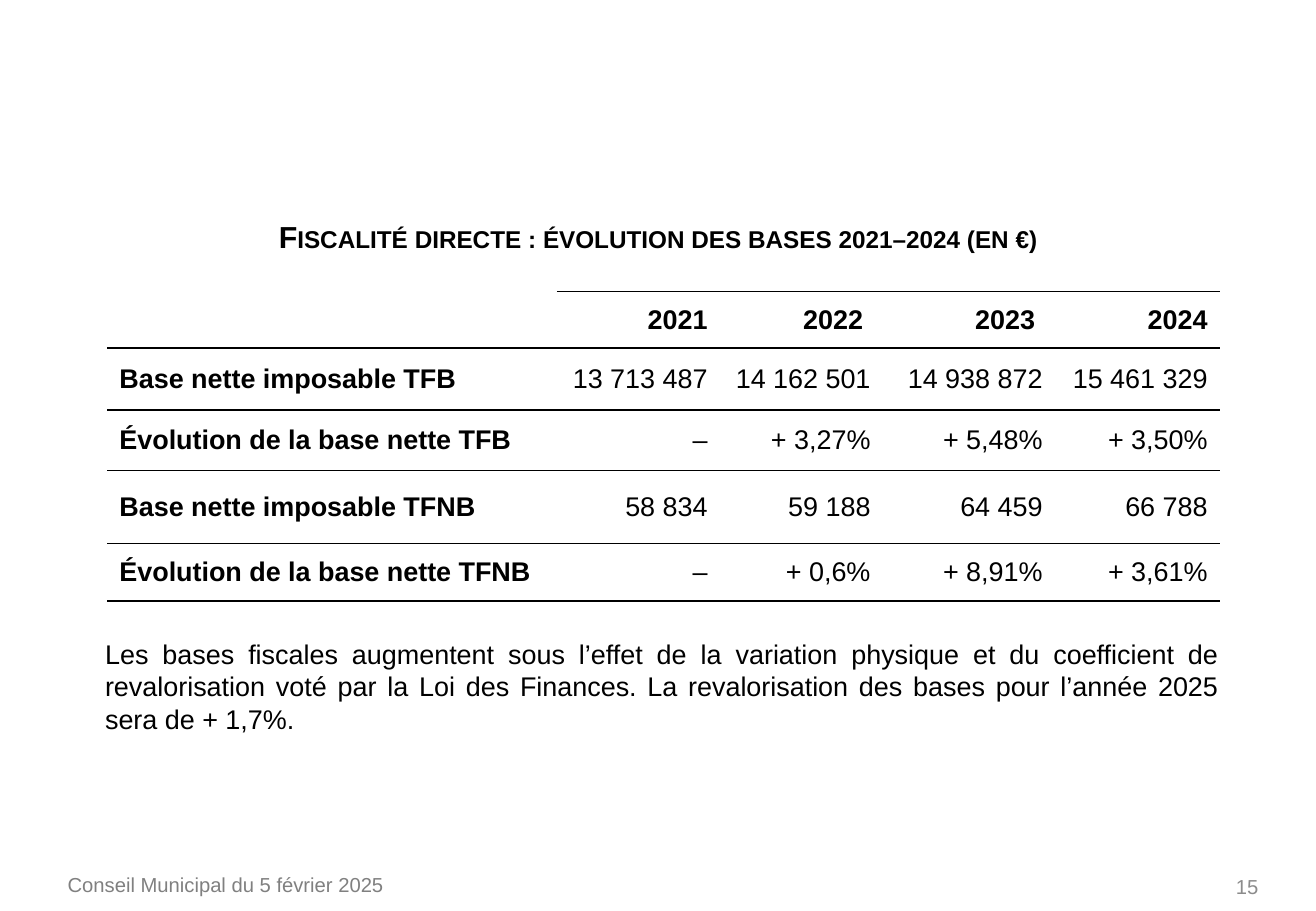
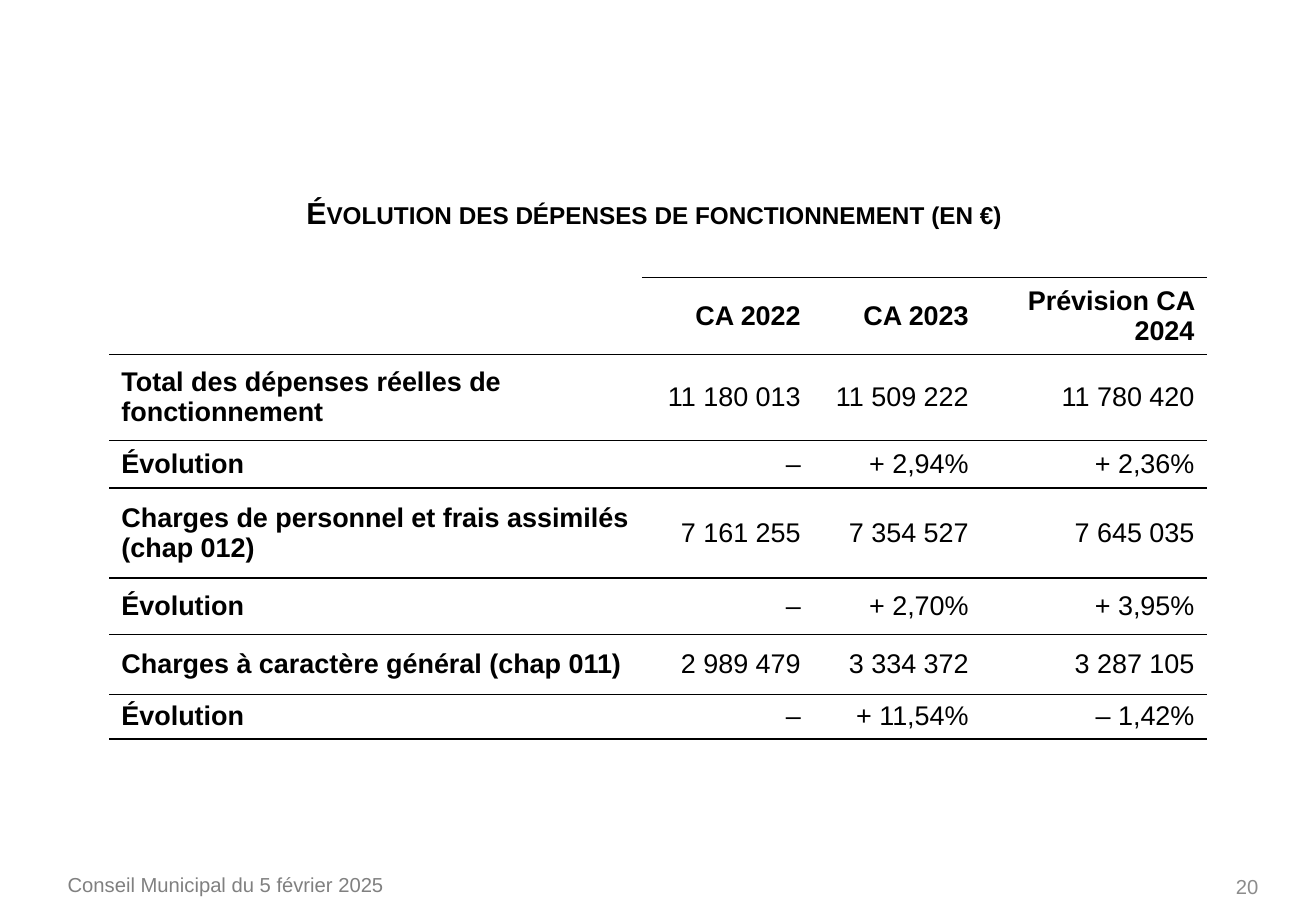
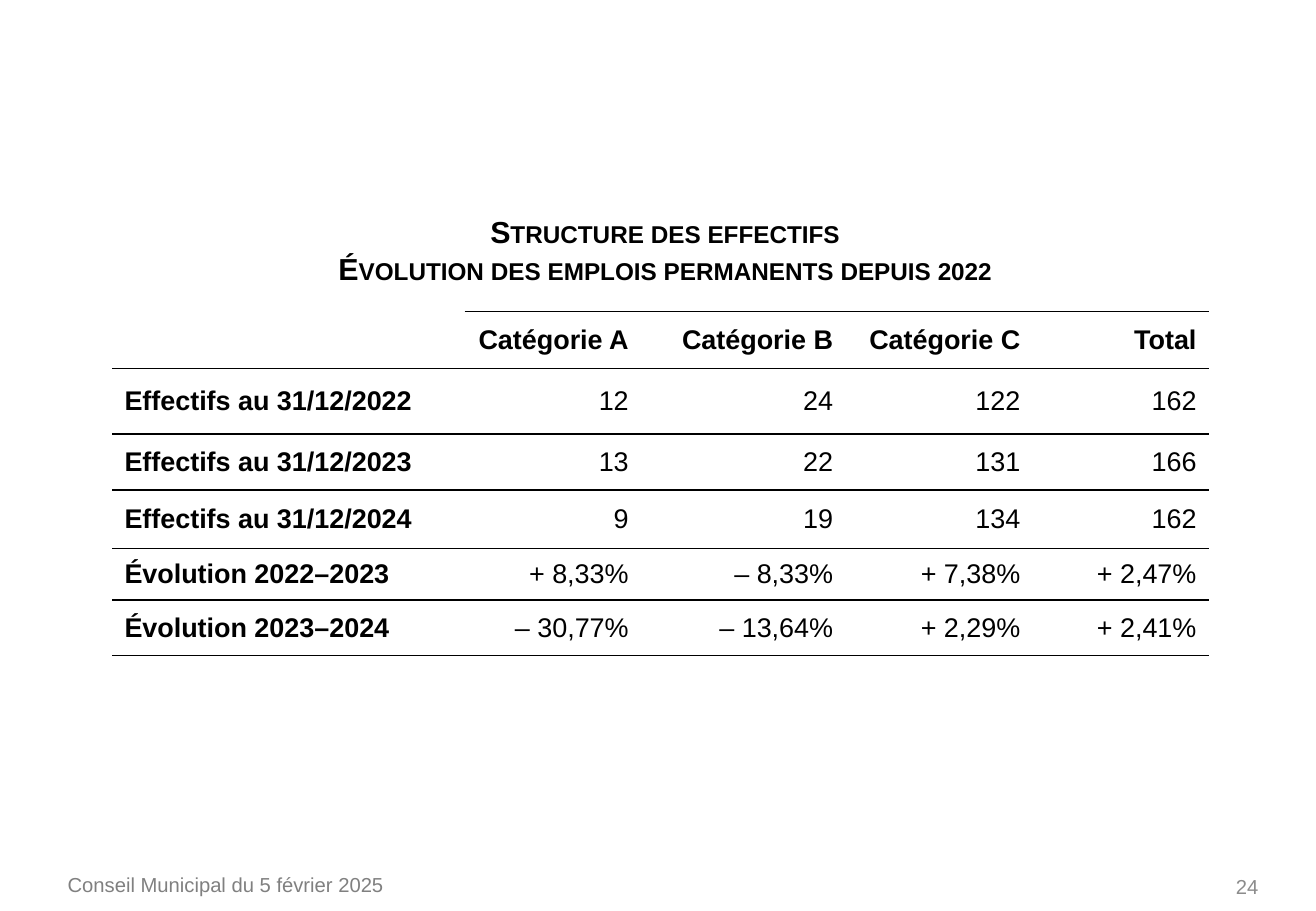
from lxml.etree import SubElement
from pptx import Presentation
from pptx.dml.color import RGBColor
from pptx.enum.text import MSO_ANCHOR as Anchor, PP_ALIGN as Align
from pptx.oxml.ns import qn
from pptx.util import Emu, Pt

PX = 7620  # 120 px to the inch
FONT = "Arial"
BLACK, FOOTER_GREY, NUMBER_GREY = "000000", "808080", "8C8C8C"
FOOTER = "Conseil Municipal du 5 février 2025"

TAX_BASES = [
    ["", "2021", "2022 ", "2023 ", "2024"],
    ["Base nette imposable TFB", "13 713 487", "14 162 501", "14 938 872", "15 461 329"],
    ["Évolution de la base nette TFB", "–", "+ 3,27%", "+ 5,48%", "+ 3,50%"],
    ["Base nette imposable TFNB", "58 834", "59 188", "64 459", "66 788"],
    ["Évolution de la base nette TFNB", "–", "+ 0,6%", "+ 8,91%", "+ 3,61%"],
]
EXPENSES = [
    ["", "CA 2022", "CA 2023", "Prévision CA 2024"],
    ["Total des dépenses réelles de fonctionnement", "11 180 013", "11 509 222", "11 780 420"],
    ["Évolution", "–", "+ 2,94%", "+ 2,36%"],
    ["Charges de personnel et frais assimilés (chap 012)", "7 161 255", "7 354 527", "7 645 035"],
    ["Évolution", "–", "+ 2,70%", "+ 3,95%"],
    ["Charges à caractère général (chap 011)", "2 989 479", "3 334 372", "3 287 105"],
    ["Évolution", "–", "+ 11,54%", "– 1,42%"],
]
STAFF = [
    ["", "Catégorie A", "Catégorie B", "Catégorie C", "Total"],
    ["Effectifs au 31/12/2022", "12", "24", "122", "162"],
    ["Effectifs au 31/12/2023", "13", "22", "131", "166"],
    ["Effectifs au 31/12/2024", "9", "19", "134", "162"],
    ["Évolution 2022–2023", "+ 8,33%", "– 8,33%", "+ 7,38%", "+ 2,47%"],
    ["Évolution 2023–2024", "– 30,77%", "– 13,64%", "+ 2,29%", "+ 2,41%"],
]


def px(length):
    return Emu(length * PX)


def rgb(color):
    return RGBColor.from_string(color)


def write(frame, text, size=16, color=BLACK, bold=False, align=Align.LEFT, small_caps=False):
    """Fill a text frame, one paragraph per line of text."""
    for index, line in enumerate(text.split("\n")):
        para = frame.paragraphs[0] if index == 0 else frame.add_paragraph()
        para.alignment = align
        span = para.add_run()
        span.text = line
        font = span.font
        font.name, font.size, font.bold = FONT, Pt(size), bold
        font.color.rgb = rgb(color)
        if small_caps:
            font._element.set("cap", "small")


def add_text(page, at, text, anchor=Anchor.TOP, **style):
    box = page.shapes.add_textbox(*map(px, at))
    frame = box.text_frame
    frame.word_wrap = True
    frame.vertical_anchor = anchor
    write(frame, text, **style)


def add_title(page, at, text):
    add_text(page, at, text, size=18, bold=True, align=Align.CENTER, small_caps=True)


def set_borders(cell, ruled):
    """Draw 1 pt rules on the sides in ruled and clear the other sides."""
    properties = cell._tc.get_or_add_tcPr()
    for side in "LRTB":
        line = SubElement(properties, qn(f"a:ln{side}"), w=str(Pt(1)))
        if side in ruled:
            fill = SubElement(line, qn("a:solidFill"))
            SubElement(fill, qn("a:srgbClr"), val=BLACK)
        else:
            SubElement(line, qn("a:noFill"))


def add_ruled_table(page, left, top, widths, heights, rows):
    """Add a table with horizontal rules only; the corner cell is open at the top."""
    area = map(px, (left, top, sum(widths), sum(heights)))
    table = page.shapes.add_table(len(rows), len(widths), *area).table
    table.first_row = table.horz_banding = False
    for column, width in zip(table.columns, widths):
        column.width = px(width)
    for row, height in zip(table.rows, heights):
        row.height = px(height)
    for r, values in enumerate(rows):
        for c, value in enumerate(values):
            cell = table.cell(r, c)
            set_borders(cell, "TB" if r or c else "B")
            cell.fill.background()
            cell.vertical_anchor = Anchor.MIDDLE
            if value:
                write(cell.text_frame, value, bold=r == 0 or c == 0,
                      align=Align.RIGHT if c else Align.LEFT)


def add_page(deck, number):
    page = deck.slides.add_slide(deck.slide_layouts[6])
    add_text(page, (55, 856, 539, 48), FOOTER, size=12, color=FOOTER_GREY)
    add_text(page, (962, 852, 293, 48), str(number), anchor=Anchor.MIDDLE,
             size=12, color=NUMBER_GREY, align=Align.RIGHT)
    return page


def main():
    deck = Presentation()
    deck.slide_width, deck.slide_height = px(1300), px(900)

    page = add_page(deck, 15)
    add_title(page, (233, 210, 834, 48),
              "Fiscalité directe : évolution des bases 2021–2024 (en €)")
    add_ruled_table(page, 106, 288, [444, 161, 161, 170, 163],
                    [56, 61, 60, 72, 57], TAX_BASES)
    add_text(page, (92, 624, 1124, 109),
             "Les bases fiscales augmentent sous l’effet de la variation physique et du "
             "coefficient de revalorisation voté par la Loi des Finances. La revalorisation "
             "des bases pour l’année 2025 sera de + 1,7%.", align=Align.JUSTIFY)

    page = add_page(deck, 20)
    add_title(page, (274, 186, 744, 48), "Évolution des dépenses de fonctionnement (en €)")
    add_ruled_table(page, 108, 274, [526, 169, 166, 223],
                    [76, 85, 47, 89, 56, 59, 44], EXPENSES)

    page = add_page(deck, 24)
    add_title(page, (115, 205, 1084, 85),
              "Structure des effectifs\nÉvolution des emplois permanents depuis 2022")
    add_ruled_table(page, 111, 308, [348, 174, 202, 185, 174],
                    [56, 65, 55, 58, 51, 55], STAFF)

    deck.save("out.pptx")


if __name__ == "__main__":
    main()
